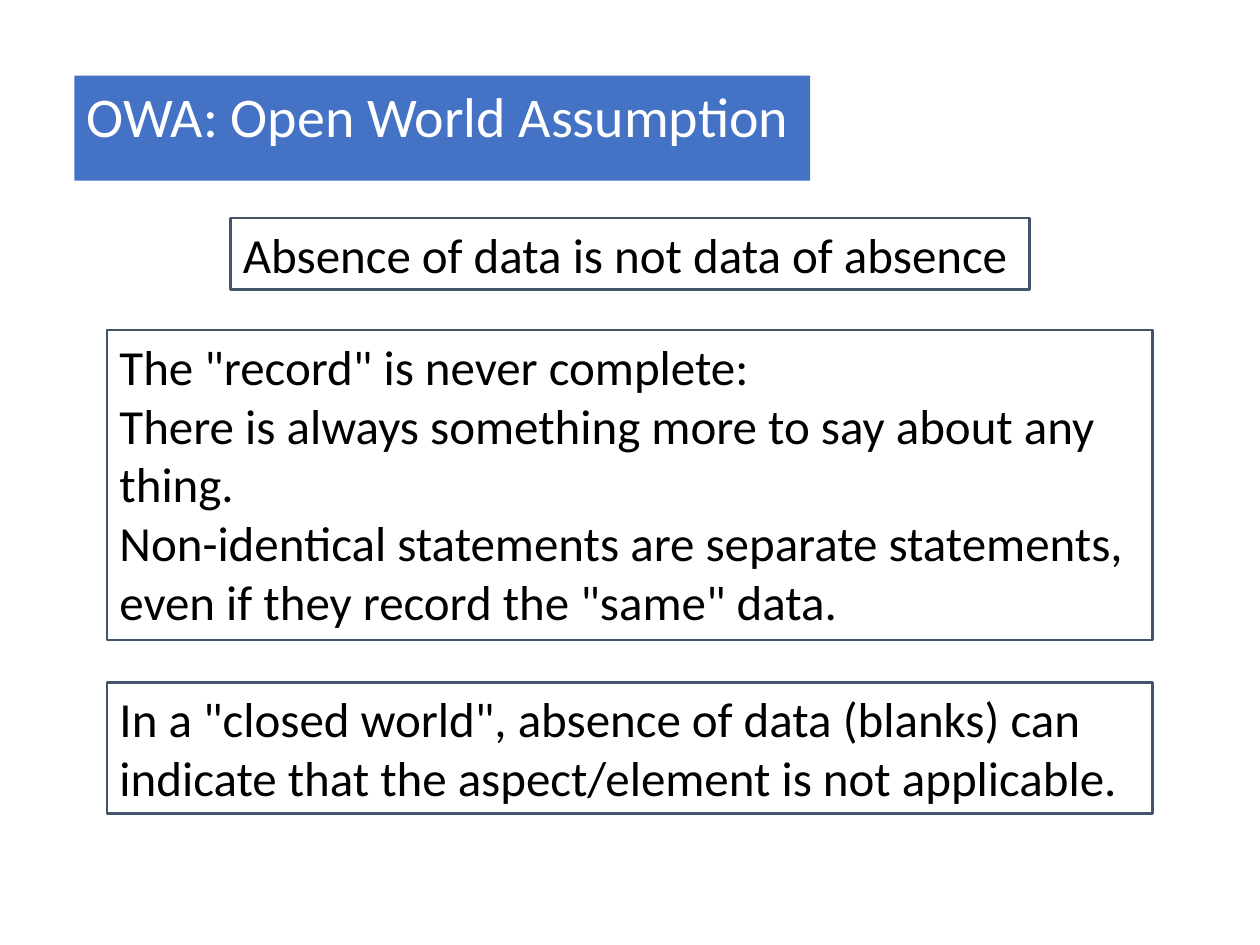
"""Build a slide that explains the open world assumption."""
from dataclasses import dataclass

from pptx import Presentation
from pptx.dml.color import RGBColor
from pptx.enum.text import MSO_ANCHOR, MSO_AUTO_SIZE, PP_ALIGN
from pptx.util import Pt

LEFT = PP_ALIGN.LEFT
TOP = MSO_ANCHOR.TOP
GROW = MSO_AUTO_SIZE.SHAPE_TO_FIT_TEXT

BLUE = RGBColor(0x44, 0x72, 0xC4)
SLATE = RGBColor(0x44, 0x54, 0x6A)
BLACK = RGBColor(0, 0, 0)
WHITE = RGBColor(0xFF, 0xFF, 0xFF)

FONT = "Calibri"
TITLE_ONLY = 5
SLIDE_WIDTH, SLIDE_HEIGHT = 720, 540


@dataclass(frozen=True)
class Statement:
    """A framed text, centred across the slide, in points."""
    text: str
    top: float
    width: float
    height: float
    wrap: bool = True


STATEMENTS = (
    Statement("Absence of data is not data of absence", 124.6, 456.5, 41, wrap=False),
    Statement(
        'The "record" is never complete:\n'
        "There is always something more to say about any thing.\n"
        'Non-identical statements are separate statements, even if they record the "same" data.',
        188.6, 597.6, 177.1,
    ),
    Statement(
        'In a "closed world", absence of data (blanks) can indicate that '
        "the aspect/element is not applicable.",
        390.2, 597.6, 74.9,
    ),
)


def write_text(shape, text: str, size: float, color: RGBColor, wrap: bool) -> None:
    """Fill a shape with left-aligned text."""
    text_frame = shape.text_frame
    text_frame.text = text
    text_frame.word_wrap = wrap
    text_frame.auto_size = GROW
    text_frame.vertical_anchor = TOP
    for paragraph in text_frame.paragraphs:
        paragraph.alignment = LEFT
        for run in paragraph.runs:
            run.font.name = FONT
            run.font.size = Pt(size)
            run.font.color.rgb = color


def add_title(slide, text: str) -> None:
    """Place the title on its blue band."""
    title = slide.shapes.title
    title.left, title.top = Pt(42.5), Pt(43.2)
    title.width, title.height = Pt(420.5), Pt(46.1)
    title.fill.solid()
    title.fill.fore_color.rgb = BLUE
    write_text(title, text, 32, WHITE, wrap=False)


def add_statement(slide, statement: Statement) -> None:
    """Draw one framed statement."""
    left = (SLIDE_WIDTH - statement.width) / 2
    box = slide.shapes.add_textbox(
        Pt(left), Pt(statement.top), Pt(statement.width), Pt(statement.height)
    )
    box.line.color.rgb = SLATE
    box.line.width = Pt(1.5)
    write_text(box, statement.text, 28, BLACK, statement.wrap)


def main() -> None:
    """Create and save the presentation."""
    presentation = Presentation()
    presentation.slide_width = Pt(SLIDE_WIDTH)
    presentation.slide_height = Pt(SLIDE_HEIGHT)
    slide = presentation.slides.add_slide(presentation.slide_layouts[TITLE_ONLY])
    add_title(slide, "OWA: Open World Assumption")
    for statement in STATEMENTS:
        add_statement(slide, statement)
    presentation.save("out.pptx")


if __name__ == "__main__":
    main()
